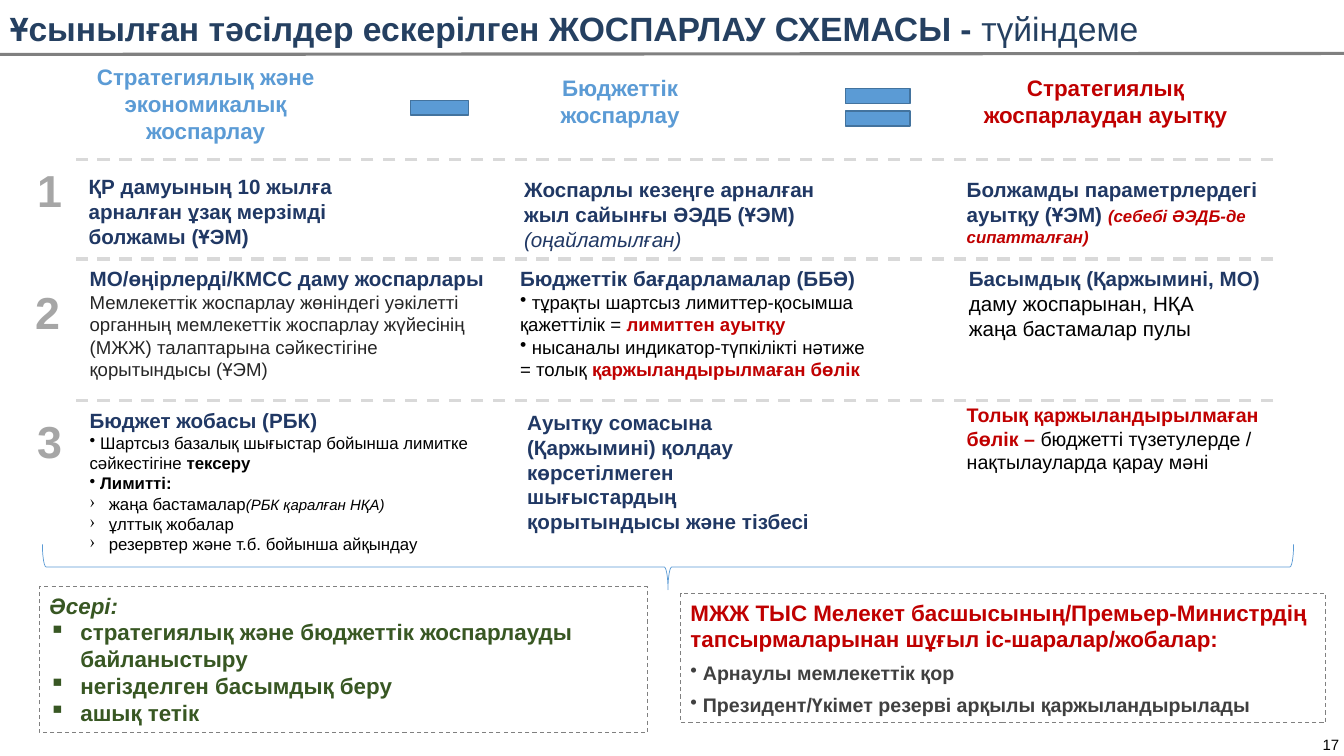
from pptx import Presentation
from pptx.dml.color import RGBColor
from pptx.enum.dml import MSO_LINE
from pptx.enum.shapes import MSO_CONNECTOR, MSO_SHAPE
from pptx.enum.text import MSO_ANCHOR, PP_ALIGN
from pptx.oxml.ns import qn
from pptx.util import Pt
from lxml.etree import SubElement

PX = 9144  # 100 px to the inch
COLORS = {
    "title": "254061", "navy": "203864", "sky": "5B9BD5", "edge": "43739E",
    "red": "C00000", "green": "385723", "black": "000000", "ink": "262626",
    "dark": "404040", "gray": "808080", "pale": "D9D9D9", "num": "A6A6A6",
}


def style(font, size=None, color=None, bold=None, italic=None):
    if size:
        font.size = Pt(size)
    if color:
        font.color.rgb = RGBColor.from_string(COLORS[color])
    if bold is not None:
        font.bold = bold
    if italic is not None:
        font.italic = italic


def para(*runs, size=14.7, color="navy", bold=True, italic=False, **form):
    """One paragraph: runs are strings or (string, style changes)."""
    look = dict(size=size, color=color, bold=bold, italic=italic)
    return runs, look, form


class Board:
    def __init__(self, wide, high, face):
        self.deck = Presentation()
        self.deck.slide_width = wide * PX
        self.deck.slide_height = high * PX
        self.slide = self.deck.slides.add_slide(self.deck.slide_layouts[6])
        self.shapes = self.slide.shapes
        self.face = face

    def edge(self, line, color, width, dash=False):
        line.color.rgb = RGBColor.from_string(COLORS[color])
        line.width = Pt(width)
        if dash:
            line.dash_style = MSO_LINE.DASH

    def rule(self, x1, y1, x2, y2, color, dash=False):
        ends = [n * PX for n in (x1, y1, x2, y2)]
        line = self.shapes.add_connector(MSO_CONNECTOR.STRAIGHT, *ends)
        self.edge(line.line, color, 2.25, dash)
        SubElement(line._element.spPr, qn("a:effectLst"))

    def shape(self, kind, box, color, width, fill=None, dash=False, turn=0):
        item = self.shapes.add_shape(kind, *[n * PX for n in box])
        item.shadow.inherit = False
        item.rotation = turn
        if fill:
            item.fill.solid()
            item.fill.fore_color.rgb = RGBColor.from_string(COLORS[fill])
        else:
            item.fill.background()
        self.edge(item.line, color, width, dash)
        return item

    def text(self, box, *paras, align=PP_ALIGN.LEFT):
        item = self.shapes.add_textbox(*[n * PX for n in box])
        self.put(item.text_frame, paras, align)
        return item.text_frame

    def panel(self, box, *paras):
        item = self.shape(MSO_SHAPE.RECTANGLE, box, "gray", 0.75, dash=True)
        self.put(item.text_frame, paras, PP_ALIGN.LEFT)

    def put(self, frame, paras, align):
        frame.word_wrap = True
        frame.vertical_anchor = MSO_ANCHOR.TOP
        for i, (runs, look, form) in enumerate(paras):
            p = frame.add_paragraph() if i else frame.paragraphs[0]
            p.alignment = align
            p.space_after = Pt(form.get("after", 0))
            p.font.name = self.face
            style(p.font, **look)
            if "mark" in form:
                self.bullet(p, form["mark"], form.get("indent", 0))
            for part in runs:
                words, change = (part, {}) if isinstance(part, str) else part
                run = p.add_run()
                run.text = words
                style(run.font, **change)

    def bullet(self, p, mark, indent):
        props = p._p.get_or_add_pPr()
        props.set("marL", str(indent * PX))
        props.set("indent", str(-indent * PX))
        char = props.makeelement(qn("a:buChar"), {"char": mark})
        props.find(qn("a:defRPr")).addprevious(char)


def main():
    board = Board(1333, 750, "Arial")
    red = dict(color="red", bold=True)
    plain = dict(color="black", bold=False)

    # Title and rules
    board.rule(0, 54, 1333, 53, "gray")
    board.text((0, 3, 1307, 50), para(
        "Ұсынылған тәсілдер ескерілген ЖОСПАРЛАУ СХЕМАСЫ - ",
        ("түйіндеме", dict(bold=False)), size=24, color="title"))
    for x, y in ((67, 158), (69, 257), (69, 397)):
        board.rule(1263, y, x, y, "pale", dash=True)

    # Column heads and signs
    for box, words, color in (
            ((70, 58, 268, 91), "Стратегиялық және экономикалық жоспарлау", "sky"),
            ((499, 69, 232, 64), "Бюджеттік жоспарлау", "sky"),
            ((950, 69, 293, 64), "Стратегиялық жоспарлаудан ауытқу", "red")):
        board.text(box, para(words, size=16, color=color), align=PP_ALIGN.CENTER)
    board.shape(MSO_SHAPE.MATH_MINUS, (397, 76, 78, 62), "edge", 1, "sky")
    board.shape(MSO_SHAPE.MATH_EQUAL, (827, 75, 87, 63), "edge", 1, "sky")

    # Row numbers
    for num, x, y in (("1", 27, 157), ("2", 25, 278), ("3", 27, 406)):
        board.text((x, y, 53, 64), para(num, size=32, color="num"))

    # Row 1
    board.text((78, 168, 319, 84), para(
        "ҚР дамуының 10 жылға арналған ұзақ мерзімді болжамы (ҰЭМ)"))
    board.text((510, 171, 309, 84), para(
        "Жоспарлы кезеңге арналған жыл сайынғы ӘЭДБ (ҰЭМ) ",
        ("(оңайлатылған)", dict(bold=False, italic=True))))
    board.text((949, 171, 337, 80), para(
        "Болжамды параметрлердегі ауытқу (ҰЭМ) ",
        ("(себебі ӘЭДБ-де сипатталған)", dict(size=12, color="red", italic=True))))

    # Row 2
    board.text(
        (79, 259, 425, 125),
        para("МО/өңірлерді/КМСС даму жоспарлары"),
        para("Мемлекеттік жоспарлау жөніндегі уәкілетті органның мемлекеттік "
             "жоспарлау жүйесінің (МЖЖ) талаптарына сәйкестігіне қорытындысы (ҰЭМ)",
             size=13.3, color="ink", bold=False))
    board.text(
        (506, 259, 430, 125),
        para("Бюджеттік бағдарламалар (ББӘ)"),
        para(" тұрақты шартсыз лимиттер-қосымша қажеттілік = ",
             ("лимиттен ауытқу", red), size=13.3, mark="•", **plain),
        para(" нысаналы индикатор-түпкілікті нәтиже", size=13.3, mark="•", **plain),
        para("= толық ", ("қаржыландырылмаған бөлік", red), size=13.3, **plain))
    board.text(
        (951, 259, 309, 84),
        para("Басымдық (Қаржымині, МО)"),
        para("даму жоспарынан, НҚА", **plain),
        para("жаңа бастамалар пулы", **plain))

    # Row 3
    item = dict(size=12, mark="›", indent=19, **plain)
    board.text(
        (79, 400, 419, 156),
        para("Бюджет жобасы (РБК)"),
        para(" Шартсыз базалық шығыстар бойынша лимитке сәйкестігіне ",
             ("тексеру", dict(bold=True)), size=12, mark="•", **plain),
        para(" Лимитті:", size=12, color="black", mark="•"),
        para("жаңа бастамалар",
             ("(РБК қаралған НҚА)", dict(size=10.7, italic=True)), **item),
        para("ұлттық жобалар", **item),
        para("резервтер және т.б. бойынша айқындау", **item))
    board.text((513, 402, 313, 134), para(
        "Ауытқу сомасына (Қаржымині) қолдау көрсетілмеген шығыстардың "
        "қорытындысы және тізбесі"))
    board.text((949, 395, 313, 81), para(
        "Толық қаржыландырылмаған бөлік – ",
        ("бюджетті түзетулерде / нақтылауларда қарау мәні", plain),
        size=14, color="red"))

    # Brace and bottom panels
    board.shape(MSO_SHAPE.RIGHT_BRACE, (640, -58, 45, 1241), "sky", 0.5, turn=90)
    goal = dict(size=16, color="green")
    point = dict(mark="▪", indent=31, **goal)
    board.panel(
        (39, 582, 603, 145),
        para("Әсері:", italic=True, **goal),
        para("стратегиялық және бюджеттік жоспарлауды байланыстыру", **point),
        para("негізделген басымдық беру", **point),
        para("ашық тетік", **point))
    fund = dict(size=14, color="dark", mark="•", after=6)
    board.panel(
        (675, 589, 640, 128),
        para("МЖЖ ТЫС Мелекет басшысының/Премьер-Министрдің тапсырмаларынан "
             "шұғыл іс-шаралар/жобалар:", size=16, color="red", after=6),
        para(" Арнаулы мемлекеттік қор", **fund),
        para(" Президент/Үкімет резерві арқылы қаржыландырылады", **fund))

    # Page number
    page = board.text((1293, 727, 54, 24), para("17", size=10.7, **plain),
                      align=PP_ALIGN.CENTER)
    page.margin_left = page.margin_right = 13 * PX
    page.margin_top = page.margin_bottom = 7 * PX
    page.vertical_anchor = MSO_ANCHOR.MIDDLE

    board.deck.save("out.pptx")


if __name__ == "__main__":
    main()
